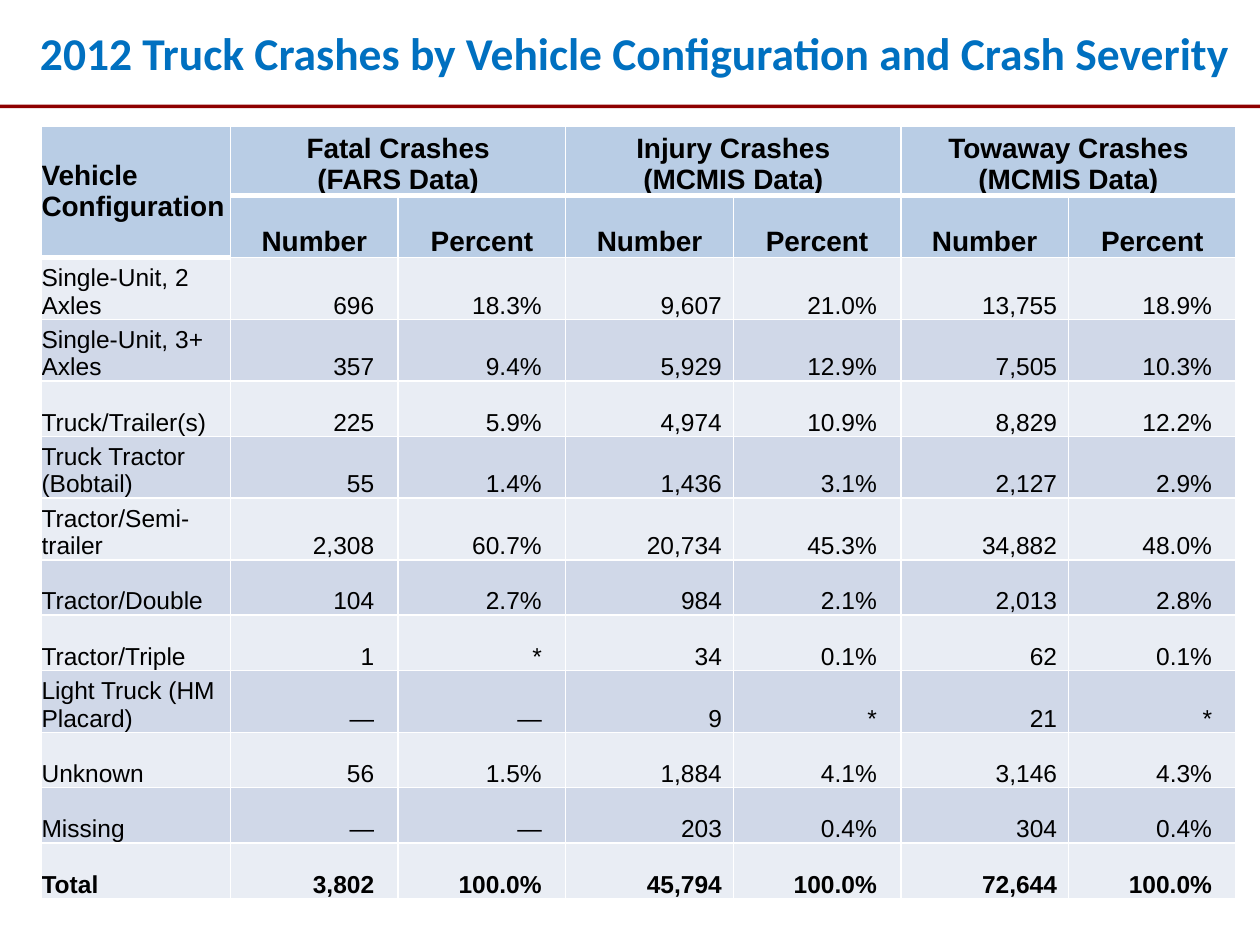
from lxml.etree import SubElement
from pptx import Presentation
from pptx.dml.color import RGBColor
from pptx.enum.shapes import MSO_SHAPE
from pptx.enum.text import MSO_ANCHOR, PP_ALIGN
from pptx.oxml.ns import qn
from pptx.util import Inches, Pt

COLORS = {"title": "0070C0", "rule": "8E0000", "header": "B9CDE5", "text": "000000",
          "light": "E9EDF4", "dark": "D0D8E8", "border": "FFFFFF"}
TITLE = " 2012 Truck Crashes by Vehicle Configuration and Crash Severity"
CORNER = "Vehicle Configuration"
GROUPS = [["Fatal Crashes", "(FARS Data)"], ["Injury Crashes\n(MCMIS Data)"],
          ["Towaway Crashes\n(MCMIS Data)"]]
MEASURES = ["Number", "Percent"]
ROWS = [
    ("Single-Unit, 2 Axles", "696", "18.3%", "9,607", "21.0%", "13,755", "18.9%"),
    ("Single-Unit, 3+ Axles", "357", "9.4%", "5,929", "12.9%", "7,505", "10.3%"),
    ("Truck/Trailer(s)", "225", "5.9%", "4,974", "10.9%", "8,829", "12.2%"),
    ("Truck Tractor (Bobtail)", "55", "1.4%", "1,436", "3.1%", "2,127", "2.9%"),
    ("Tractor/Semi-trailer", "2,308", "60.7%", "20,734", "45.3%", "34,882", "48.0%"),
    ("Tractor/Double", "104", "2.7%", "984", "2.1%", "2,013", "2.8%"),
    ("Tractor/Triple", "1", "*", "34", "0.1%", "62", "0.1%"),
    ("Light Truck (HM Placard)", "—", "—", "9", "*", "21", "*"),
    ("Unknown", "56", "1.5%", "1,884", "4.1%", "3,146", "4.3%"),
    ("Missing", "—", "—", "203", "0.4%", "304", "0.4%"),
    ("Total", "3,802", "100.0%", "45,794", "100.0%", "72,644", "100.0%"),
]
COLUMN_WIDTHS = [1.5] + [1.33] * 6
ROW_HEIGHTS = [0.55, 0.49, 0.49, 0.49, 0.44, 0.49, 0.49, 0.44, 0.44, 0.49, 0.44, 0.44, 0.44]
NUMBER_INSETS = [0.19, 0.19, 0.09, 0.19, 0.09, 0.19]


def color(name):
    return RGBColor.from_string(COLORS[name])


def add_span(para, text, size, bold, font="Arial", tint="text"):
    for index, line in enumerate(text.split("\n")):
        if index:
            para.add_line_break()
        span = para.add_run()
        span.text = line
        span.font.name = font
        span.font.size = Pt(size)
        span.font.bold = bold
        span.font.color.rgb = color(tint)


def width_below(row, column):
    return 3 if row == (1 if column == 0 else 0) else 1


def style_cell(cell, row, column, fill):
    properties = cell._tc.get_or_add_tcPr()
    widths = {"lnL": 1, "lnR": 1, "lnT": width_below(row - 1, column),
              "lnB": width_below(row, column)}
    for edge, width in widths.items():
        line = SubElement(properties, qn(f"a:{edge}"), w=str(Pt(width)))
        solid = SubElement(line, qn("a:solidFill"))
        SubElement(solid, qn("a:srgbClr"), val=COLORS["border"])
    cell.fill.solid()
    cell.fill.fore_color.rgb = color(fill)
    cell.margin_left = cell.margin_right = cell.margin_top = cell.margin_bottom = 0
    cell.vertical_anchor = MSO_ANCHOR.BOTTOM


def write_cell(cell, paragraphs, size, bold, align, inset=0):
    cell.margin_right = Inches(inset)
    frame = cell.text_frame
    for index, text in enumerate(paragraphs):
        para = frame.add_paragraph() if index else frame.paragraphs[0]
        para.alignment = align
        add_span(para, text, size, bold)


def add_title(page):
    title = page.shapes.title
    title.left, title.top, title.width, title.height = 0, 0, Inches(10), Inches(0.83)
    title.text_frame.vertical_anchor = MSO_ANCHOR.MIDDLE
    para = title.text_frame.paragraphs[0]
    para.alignment = PP_ALIGN.CENTER
    add_span(para, TITLE, 26, True, "Calibri", "title")


def add_rule(page):
    rule = page.shapes.add_shape(MSO_SHAPE.RECTANGLE, 0, Inches(0.83), Inches(10), Inches(0.03))
    rule.shadow.inherit = False
    rule.fill.solid()
    rule.fill.fore_color.rgb = color("rule")
    rule.line.fill.background()


def add_crash_table(page):
    table = page.shapes.add_table(
        len(ROW_HEIGHTS), len(COLUMN_WIDTHS), Inches(0.33), Inches(1),
        Inches(sum(COLUMN_WIDTHS)), Inches(sum(ROW_HEIGHTS))).table
    table.horz_banding = False
    for column, width in zip(table.columns, COLUMN_WIDTHS):
        column.width = Inches(width)
    for row, height in enumerate(ROW_HEIGHTS):
        table.rows[row].height = Inches(height)
        fill = "header" if row < 2 else ("light", "dark")[row % 2]
        for column in range(len(COLUMN_WIDTHS)):
            style_cell(table.cell(row, column), row, column, fill)

    corner = table.cell(0, 0)
    corner.merge(table.cell(1, 0))
    corner.vertical_anchor = MSO_ANCHOR.MIDDLE
    write_cell(corner, [CORNER], 16, True, PP_ALIGN.LEFT)
    for group, heading in enumerate(GROUPS):
        first = 1 + group * len(MEASURES)
        cell = table.cell(0, first)
        cell.merge(table.cell(0, first + len(MEASURES) - 1))
        write_cell(cell, heading, 16, True, PP_ALIGN.CENTER)
        for offset, measure in enumerate(MEASURES):
            write_cell(table.cell(1, first + offset), [measure], 16, True, PP_ALIGN.CENTER)
    for row, (label, *values) in enumerate(ROWS, start=2):
        bold = label == "Total"
        write_cell(table.cell(row, 0), [label], 14, bold, PP_ALIGN.LEFT)
        for column, (value, inset) in enumerate(zip(values, NUMBER_INSETS), start=1):
            write_cell(table.cell(row, column), [value], 14, bold, PP_ALIGN.RIGHT, inset)


def main():
    """Build the truck crash slide and save it."""
    deck = Presentation()
    deck.slide_width, deck.slide_height = Inches(10), Inches(7.5)
    page = deck.slides.add_slide(deck.slide_layouts[5])
    add_rule(page)
    add_title(page)
    add_crash_table(page)
    deck.save("out.pptx")


if __name__ == "__main__":
    main()
